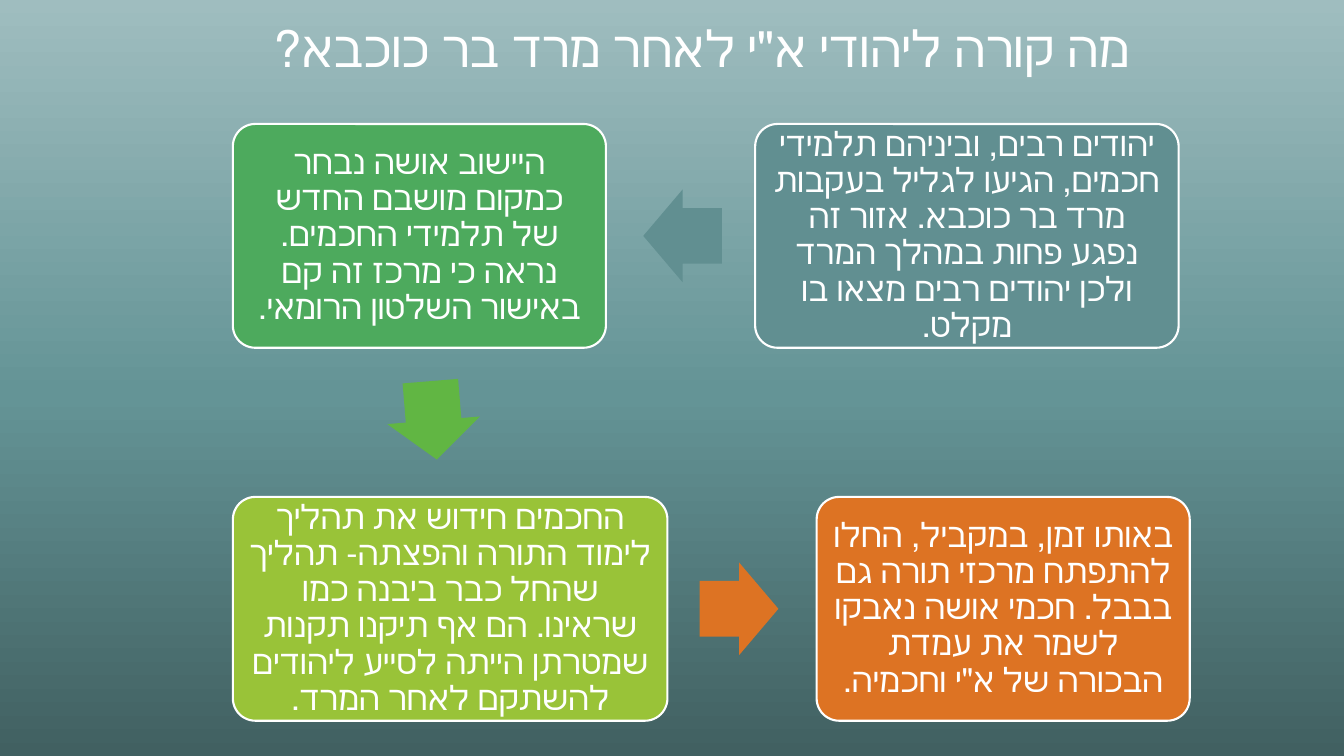
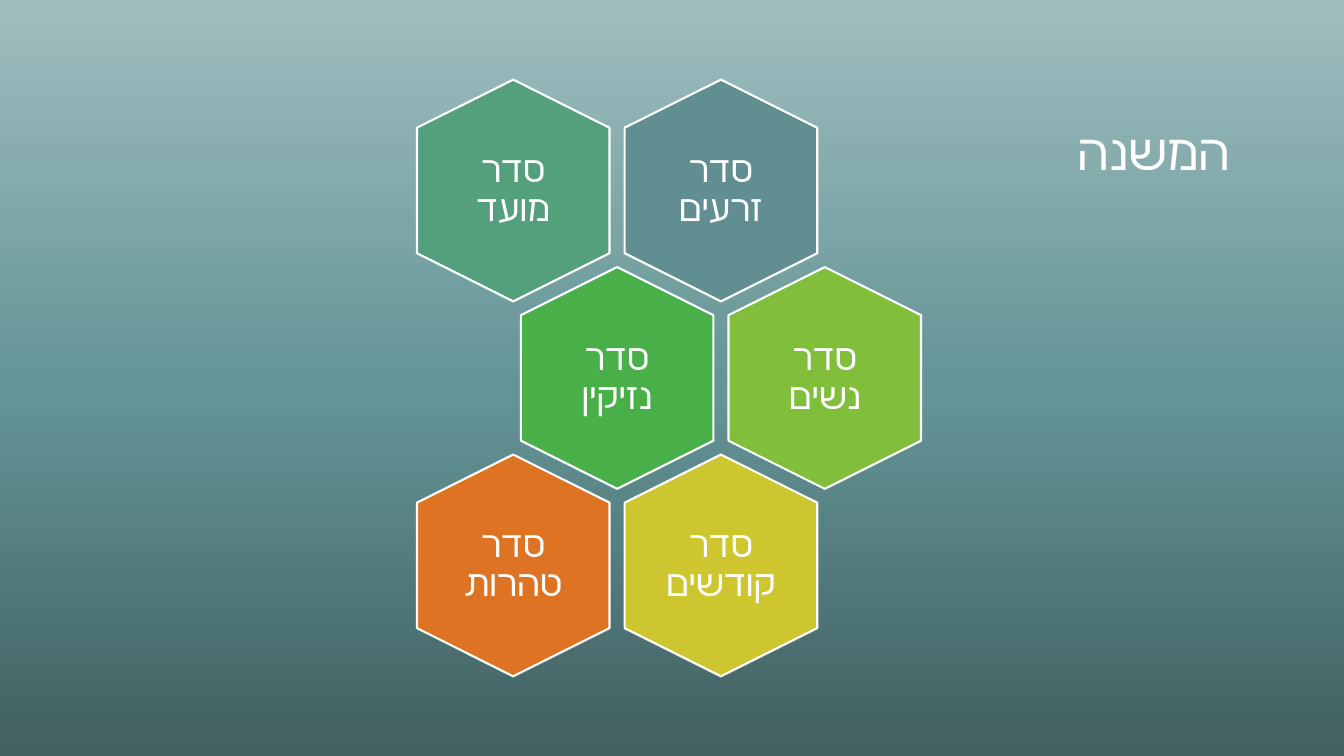
from copy import deepcopy

from pptx import Presentation
from pptx.dml.color import RGBColor
from pptx.enum.shapes import MSO_SHAPE
from pptx.enum.text import MSO_ANCHOR, PP_ALIGN
from pptx.oxml.ns import qn
from pptx.util import Inches, Pt

ROUND_RECT = MSO_SHAPE.ROUNDED_RECTANGLE
ARROW = MSO_SHAPE.RIGHT_ARROW
HEXAGON = MSO_SHAPE.HEXAGON
CENTER, RIGHT = PP_ALIGN.CENTER, PP_ALIGN.RIGHT
MIDDLE, BOTTOM = MSO_ANCHOR.MIDDLE, MSO_ANCHOR.BOTTOM

COLORS = {
    "white": "FFFFFF",
    "teal": "618F91",
    "sea": "55A07C",
    "green": "4DAA5D",
    "leaf": "49AF49",
    "grass": "61B643",
    "apple": "80BE3C",
    "lime": "99C338",
    "yellow": "CEC62F",
    "orange": "DD7323",
    "bg_dark": "416061",
    "bg_mid": "649496",
    "bg_light": "9FBDBF",
}
BACKGROUND = [(0, "bg_dark"), (0.48, "bg_mid"), (1, "bg_light")]
TITLE_FONT, BODY_FONT = "Cabin", "Cambria"

# text, colour, left (from the flow's corner), row, width
FLOW_STEPS = [
    ("יהודים רבים, וביניהם תלמידי חכמים, הגיעו לגליל בעקבות מרד בר כוכבא. "
     "אזור זה נפגע פחות במהלך המרד ולכן יהודים רבים מצאו בו מקלט.",
     "teal", 5.18, 0, 4.2),
    ("היישוב אושה נבחר כמקום מושבם החדש של תלמידי החכמים. "
     "נראה כי מרכז זה קם באישור השלטון הרומאי.",
     "green", 0, 0, 3.7),
    ("החכמים חידוש את תהליך לימוד התורה והפצתה- תהליך שהחל כבר ביבנה כמו "
     "שראינו. הם אף תיקנו תקנות שמטרתן הייתה לסייע ליהודים להשתקם לאחר המרד.",
     "lime", 0, 1, 4.31),
    ("באותו זמן, במקביל, החלו להתפתח מרכזי תורה גם בבבל. "
     "חכמי אושה נאבקו לשמר את עמדת הבכורה של א\"י וחכמיה.",
     "orange", 5.79, 1, 3.7),
]
# colour, left, top (from the flow's corner), rotation
FLOW_ARROWS = [
    ("teal", 4.07, 0.65, 180),
    ("grass", 1.6, 2.48, 85.3),
    ("orange", 4.63, 4.35, 0),
]
# text, colour, column, row
ORDERS = [
    ("סדר זרעים", "teal", 1, 0),
    ("סדר מועד", "sea", 0, 0),
    ("סדר נזיקין", "leaf", 0, 1),
    ("סדר נשים", "apple", 1, 1),
    ("סדר קודשים", "yellow", 1, 2),
    ("סדר טהרות", "orange", 0, 2),
]


def rgb(name):
    return RGBColor.from_string(COLORS[name])


def set_background(master):
    fill = master.background.fill
    fill.gradient()
    fill.gradient_angle = 90
    stops = master.element.find(".//" + qn("a:gsLst"))
    stops.append(deepcopy(stops[0]))
    for stop, (position, color) in zip(fill.gradient_stops, BACKGROUND):
        stop.position = position
        stop.color.rgb = rgb(color)


def write(sp, text, size, font, align, anchor, spacing, insets):
    """Fill a shape with one right-to-left paragraph in white."""
    tf = sp.text_frame
    tf.word_wrap = True
    tf.vertical_anchor = anchor
    tf.margin_left = tf.margin_right = Inches(insets[0])
    tf.margin_top = tf.margin_bottom = Inches(insets[1])
    p = tf.paragraphs[0]
    p.alignment = align
    p.line_spacing = spacing
    p._p.get_or_add_pPr().set("rtl", "1")
    r = p.add_run()
    r.text = text
    r.font.size = Pt(size)
    r.font.name = font
    r.font.color.rgb = rgb("white")


def add_title(s, text, box):
    sp = s.shapes.add_textbox(*map(Inches, box))
    write(sp, text, 36, TITLE_FONT, RIGHT, BOTTOM, 0.8, (0.13, 0.07))


def add_shape(s, kind, box, color, outlined=True, rotation=0):
    sp = s.shapes.add_shape(kind, *map(Inches, box))
    sp.shadow.inherit = False
    sp.rotation = rotation
    sp.fill.solid()
    sp.fill.fore_color.rgb = rgb(color)
    if outlined:
        sp.line.color.rgb = rgb("white")
        sp.line.width = Pt(1.5)
    else:
        sp.line.fill.background()
    return sp


def add_flow(s, left, top):
    row_pitch, height = 3.7, 2.22
    for text, color, x, row, width in FLOW_STEPS:
        box = (left + x, top + row * row_pitch, width, height)
        sp = add_shape(s, ROUND_RECT, box, color)
        sp.adjustments[0] = 0.1
        write(sp, text, 24, BODY_FONT, CENTER, MIDDLE, 0.9, (0.1, 0.1))
    for color, x, y, rotation in FLOW_ARROWS:
        box = (left + x, top + y, 0.78, 0.92)
        sp = add_shape(s, ARROW, box, color, False, rotation)
        sp.adjustments[0] = 0.6
        sp.adjustments[1] = 0.5


def add_honeycomb(s, center_x, center_y):
    """Place hexagons around the centre of the first cell; odd rows shift."""
    length, breadth = 2.2, 1.91
    label_w, label_h = 1.32, 1.51
    col_pitch, row_pitch = 2.06, 1.86
    for text, color, col, row in ORDERS:
        x = center_x + (col + row % 2 / 2) * col_pitch
        y = center_y + row * row_pitch
        box = (x - length / 2, y - breadth / 2, length, breadth)
        add_shape(s, HEXAGON, box, color, rotation=90)
        box = (x - label_w / 2, y - label_h / 2, label_w, label_h)
        label = s.shapes.add_textbox(*map(Inches, box))
        write(label, text, 26, BODY_FONT, CENTER, MIDDLE, 0.9, (0.05, 0.05))


def main():
    prs = Presentation()
    prs.slide_width, prs.slide_height = Inches(13.33), Inches(7.5)
    set_background(prs.slide_master)
    blank = prs.slide_layouts[6]

    s = prs.slides.add_slide(blank)
    add_title(s, "מה קורה ליהודי א\"י לאחר מרד בר כוכבא?", (0.01, 0.13, 11.33, 0.71))
    add_flow(s, 2.31, 1.23)

    s = prs.slides.add_slide(blank)
    add_title(s, "המשנה", (1, 0.53, 11.33, 1.33))
    add_honeycomb(s, 5.09, 1.89)

    prs.save("out.pptx")


if __name__ == "__main__":
    main()
